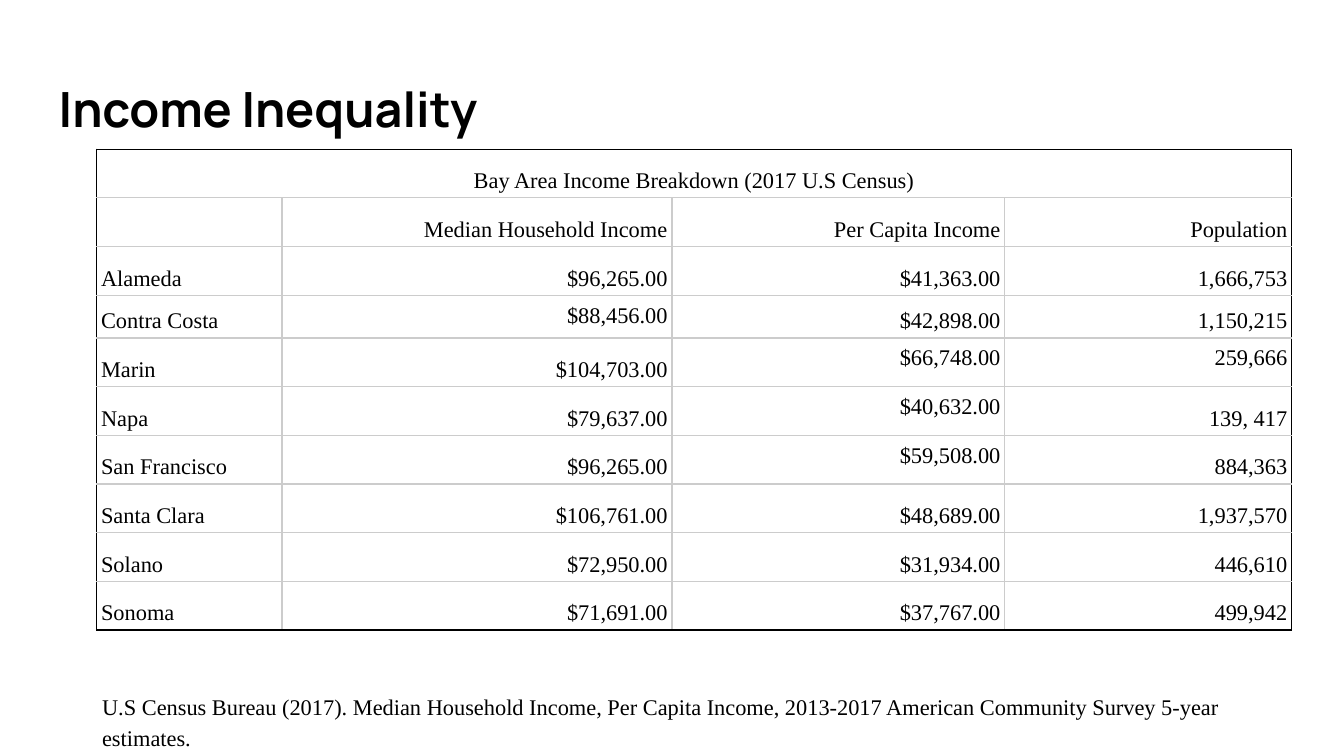
from dataclasses import dataclass

from lxml.etree import SubElement
from pptx import Presentation
from pptx.dml.color import RGBColor
from pptx.enum.text import MSO_ANCHOR, PP_ALIGN
from pptx.oxml.ns import qn
from pptx.util import Cm, Pt


@dataclass(frozen=True)
class Theme:
    ink: str = "000000"
    grid: str = "CCCCCC"
    head: str = "Manrope"
    body: str = "Times New Roman"
    big: int = 26
    small: int = 12
    line: float = 0.75
    lead: float = 1.15


@dataclass(frozen=True)
class Row:
    texts: tuple
    height: float = 0.92
    tops: tuple = ()  # columns whose text sits at the top


@dataclass(frozen=True)
class Label:
    text: str
    box: tuple
    font: str
    size: int
    bold: bool = False
    lead: float = 1
    inset: float = 0.25


THEME = Theme()
WIDTHS = (3.5, 7.37, 6.29, 5.42)
ROWS = (
    Row(("Bay Area Income Breakdown (2017 U.S Census)", "", "", "")),
    Row(("", "Median Household Income", "Per Capita Income", "Population")),
    Row(("Alameda", "$96,265.00", "$41,363.00", "1,666,753")),
    Row(("Contra Costa", "$88,456.00", "$42,898.00", "1,150,215"), 0.81, (1,)),
    Row(("Marin", "$104,703.00", "$66,748.00", "259,666"), tops=(2, 3)),
    Row(("Napa", "$79,637.00", "$40,632.00", "139, 417"), tops=(2,)),
    Row(("San Francisco", "$96,265.00", "$59,508.00", "884,363"), tops=(2,)),
    Row(("Santa Clara", "$106,761.00", "$48,689.00", "1,937,570")),
    Row(("Solano", "$72,950.00", "$31,934.00", "446,610")),
    Row(("Sonoma", "$71,691.00", "$37,767.00", "499,942")),
)
LABELS = (
    Label("Income Inequality", (0.86, 1.24, 23.67, 1.6),
          THEME.head, THEME.big, bold=True),
    Label("U.S Census Bureau (2017). Median Household Income, Per Capita Income, "
          "2013-2017 American Community Survey 5-year estimates.",
          (1.68, 12.19, 22.07, 1.12), THEME.body, THEME.small,
          lead=THEME.lead, inset=0.84),
)


def style(para, font: str, size: int, bold: bool = False, lead: float = 1) -> None:
    para.line_spacing = lead
    for run in para.runs:
        run.font.name = font
        run.font.size = Pt(size)
        run.font.bold = bold
        run.font.color.rgb = RGBColor.from_string(THEME.ink)
    if not para.runs:
        # An empty paragraph takes its height from its end mark.
        SubElement(para._p, qn("a:endParaRPr"), sz=str(size * 100))


def add_label(slide, label: Label) -> None:
    frame = slide.shapes.add_textbox(*map(Cm, label.box)).text_frame
    frame.word_wrap = True
    frame.margin_left = frame.margin_right = frame.margin_bottom = Cm(0.25)
    frame.margin_top = Cm(label.inset)
    frame.text = label.text
    style(frame.paragraphs[0], label.font, label.size, label.bold, label.lead)


def add_edge(cell, side: str, color: str) -> None:
    edge = SubElement(cell._tc.get_or_add_tcPr(), qn(f"a:ln{side}"),
                      w=str(Pt(THEME.line)))
    fill = SubElement(edge, qn("a:solidFill"))
    SubElement(fill, qn("a:srgbClr"), val=color)


def fill_cell(cell, text: str, row: int, col: int, top: bool) -> None:
    wide = cell.is_merge_origin
    outer = {"L": col == 0, "R": wide or col == len(WIDTHS) - 1,
             "T": row == 0, "B": row == len(ROWS) - 1}
    for side, dark in outer.items():
        add_edge(cell, side, THEME.ink if dark else THEME.grid)
    cell.fill.background()
    cell.margin_left = cell.margin_right = Cm(0.08)
    cell.margin_top = cell.margin_bottom = Cm(0.08)
    cell.vertical_anchor = MSO_ANCHOR.TOP if top else MSO_ANCHOR.BOTTOM
    para = cell.text_frame.paragraphs[0]
    if text:
        para.text = text
    if wide:
        para.alignment = PP_ALIGN.CENTER
    else:
        para.alignment = PP_ALIGN.RIGHT if col else PP_ALIGN.LEFT
    style(para, THEME.body, THEME.small, lead=THEME.lead)


def add_grid(slide) -> None:
    height = sum(row.height for row in ROWS)
    table = slide.shapes.add_table(
        len(ROWS), len(WIDTHS), Cm(1.83), Cm(2.82),
        Cm(sum(WIDTHS)), Cm(height)).table
    table.first_row = table.horz_banding = False
    for col, width in zip(table.columns, WIDTHS):
        col.width = Cm(width)
    table.cell(0, 0).merge(table.cell(0, len(WIDTHS) - 1))
    for r, row in enumerate(ROWS):
        table.rows[r].height = Cm(row.height)
        for c, text in enumerate(row.texts):
            fill_cell(table.cell(r, c), text, r, c, c in row.tops)


def main() -> None:
    deck = Presentation()
    deck.slide_width, deck.slide_height = Cm(25.4), Cm(14.29)
    slide = deck.slides.add_slide(deck.slide_layouts[6])
    title, note = LABELS
    add_label(slide, title)
    add_grid(slide)
    add_label(slide, note)
    deck.save("out.pptx")


if __name__ == "__main__":
    main()
